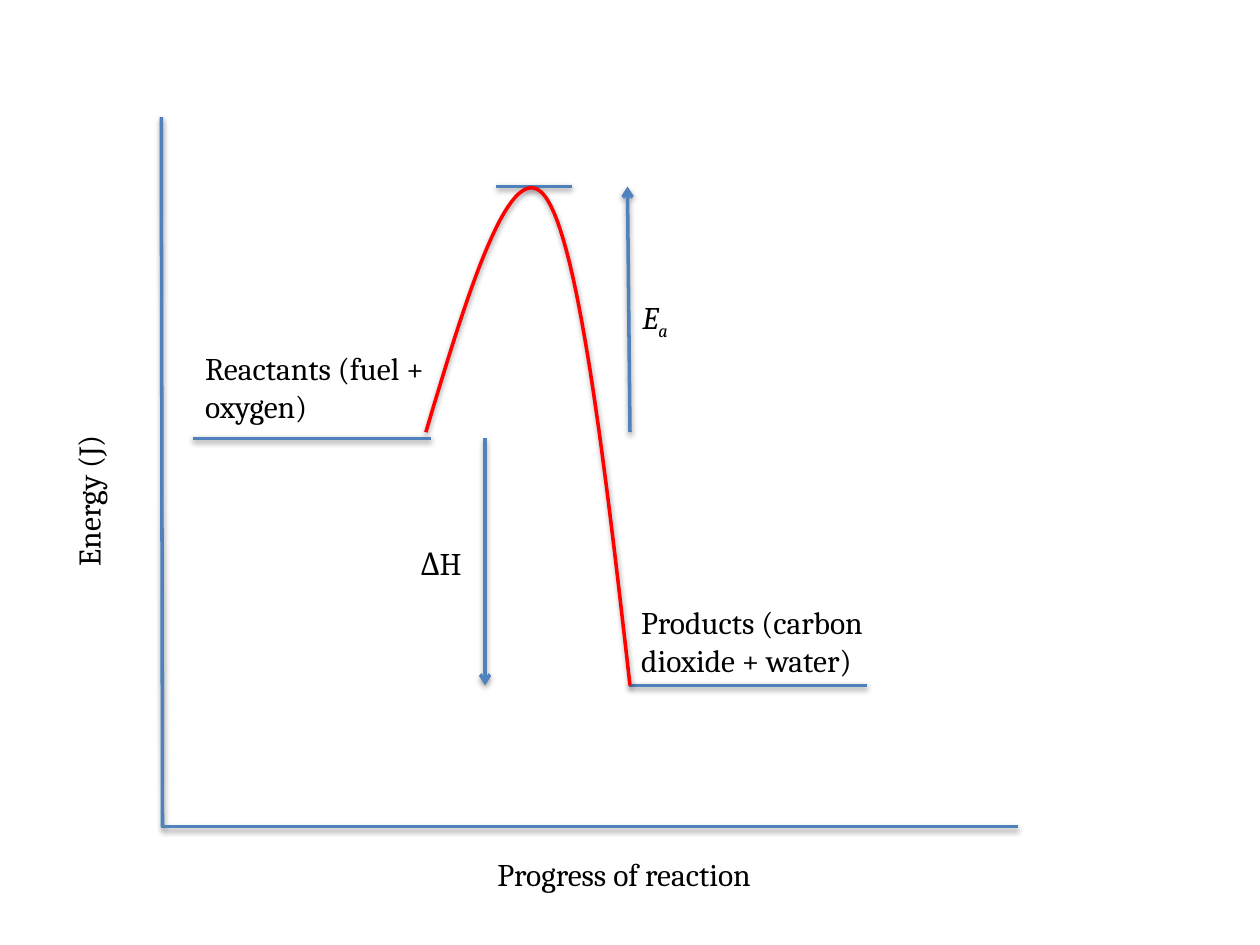
"""Build an energy profile slide for an exothermic combustion reaction."""
from lxml import etree
from pptx import Presentation
from pptx.dml.color import RGBColor
from pptx.enum import shapes, text
from pptx.oxml import parse_xml
from pptx.oxml.ns import nsdecls, qn
from pptx.util import Inches, Pt

HUES = {"axis": "4F81BD", "curve": "FF0000", "text": "000000", "shade": "000000"}
FONT, SIZE, WEIGHT = "Cambria", 18, 2
STEPS = 30

LEFT, BASE = 1.28, 6.56
HIGH, LOW, PEAK = 3.48, 5.44, 1.48
START = 3.43

# from, to, arrow
LINES = [
    ((LEFT, 0.93), (1.29, BASE), False),
    ((LEFT, BASE), (8.08, BASE), False),
    ((1.53, HIGH), (3.42, HIGH), False),
    ((4.99, LOW), (6.88, LOW), False),
    ((3.85, HIGH), (3.85, LOW), True),
    ((3.94, PEAK), (4.54, PEAK), False),
    ((5, START), (4.98, PEAK), True),
]
CURVE = [
    ((3.38, START), (3.71, 2.32), (4.05, 1.22), (4.32, 1.55)),
    ((4.32, 1.55), (4.59, 1.89), (4.8, 3.67), (5, LOW)),
]
# runs, place, turn, wrap
LABELS = [
    (["Progress of reaction"], (3.85, 6.74, 3.74, 0.4), 0, True),
    (["Reactants (fuel + oxygen)"], (1.53, 2.72, 2.11, 0.71), 0, True),
    (["Products (carbon dioxide + water)"], (4.99, 4.74, 2.11, 0.71), 0, True),
    (["ΔH"], (3.24, 4.27, 2.06, 0.4), 0, True),
    (["Energy (J)"], (-1.17, 2.52, 3.74, 0.4), 270, True),
    (["E", "a"], (5, 2.32, 0.46, 0.4), 0, False),
]


def color(name):
    return RGBColor.from_string(HUES[name])


def style(shape, hue, arrow=False):
    shape.line.color.rgb = color(hue)
    shape.line.width = Pt(WEIGHT)
    if arrow:
        etree.SubElement(shape.line._get_or_add_ln(), qn("a:tailEnd"), type="arrow")
    props = shape._element.spPr
    for old in props.findall(qn("a:effectLst")):
        props.remove(old)
    props.append(parse_xml(
        f'<a:effectLst {nsdecls("a")}><a:outerShdw blurRad="40000" dist="20000" '
        f'dir="5400000" rotWithShape="0"><a:srgbClr val="{HUES["shade"]}">'
        '<a:alpha val="38000"/></a:srgbClr></a:outerShdw></a:effectLst>'))


def add_line(slide, start, end, arrow):
    ends = [Inches(v) for v in start + end]
    line = slide.shapes.add_connector(shapes.MSO_CONNECTOR.STRAIGHT, *ends)
    style(line, "axis", arrow)


def bezier(a, b, c, d, t):
    s = 1 - t
    return tuple(
        Inches(s**3 * p + 3 * s * s * t * q + 3 * s * t * t * r + t**3 * e)
        for p, q, r, e in zip(a, b, c, d))


def add_curve(slide):
    first, *rest = [bezier(*part, n / STEPS) for part in CURVE for n in range(STEPS + 1)]
    path = slide.shapes.build_freeform(*first)
    path.add_line_segments(rest, close=False)
    curve = path.convert_to_shape()
    curve.fill.background()
    style(curve, "curve")


def add_label(slide, words, place, turn, wrap):
    box = slide.shapes.add_textbox(*map(Inches, place))
    box.rotation = turn
    frame = box.text_frame
    frame.word_wrap = wrap
    frame.auto_size = text.MSO_AUTO_SIZE.SHAPE_TO_FIT_TEXT
    for n, word in enumerate(words):
        run = frame.paragraphs[0].add_run()
        run.text = word
        run.font.name, run.font.size = FONT, Pt(SIZE)
        run.font.color.rgb = color("text")
        if len(words) > 1:
            run.font.italic = True
        if n:
            run._r.get_or_add_rPr().set("baseline", "-25000")


def main():
    deck = Presentation()
    deck.slide_width, deck.slide_height = Inches(10), Inches(7.5)
    slide = deck.slides.add_slide(deck.slide_layouts[6])
    for line in LINES:
        add_line(slide, *line)
    for label in LABELS:
        add_label(slide, *label)
    add_curve(slide)
    deck.save("out.pptx")


if __name__ == "__main__":
    main()
